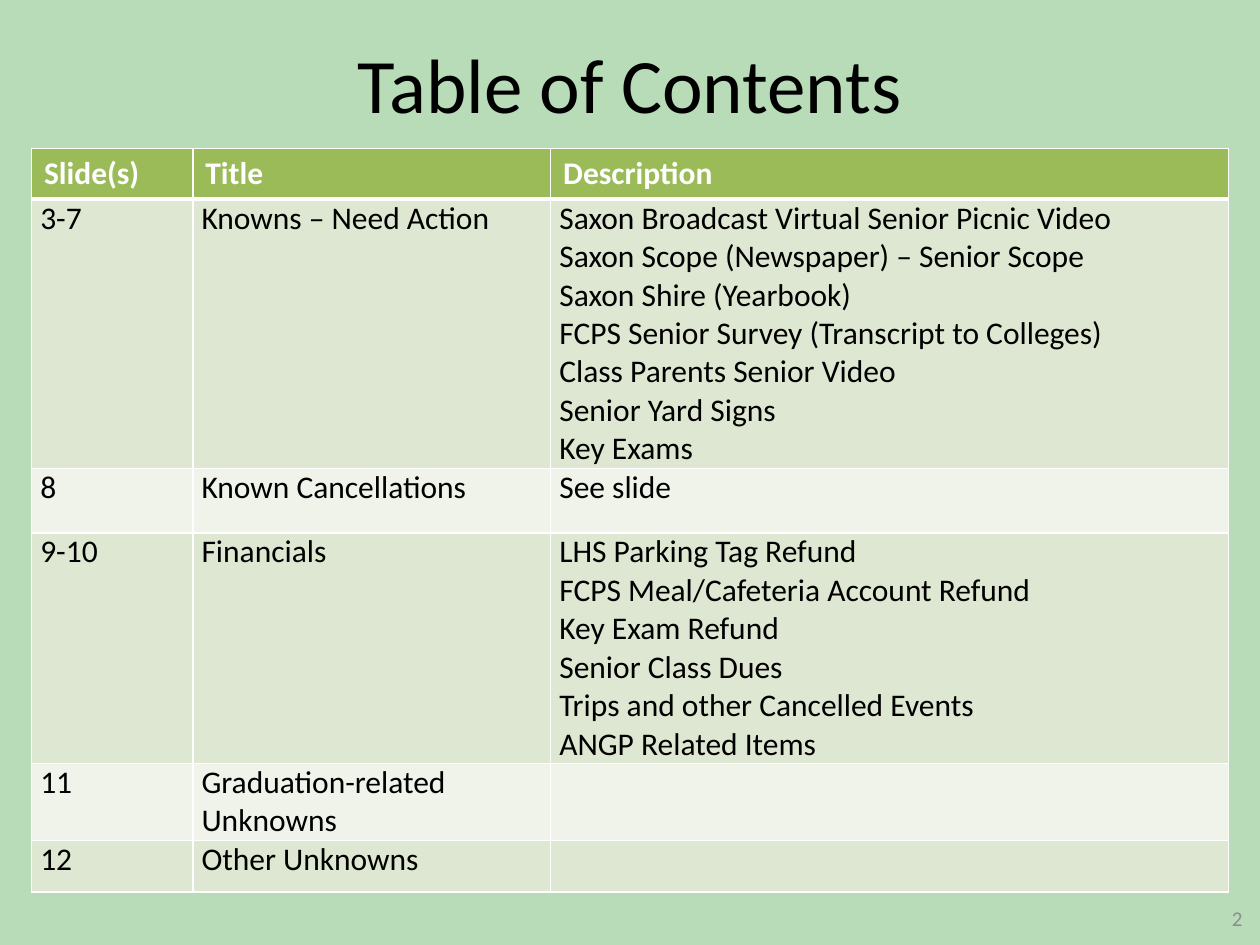
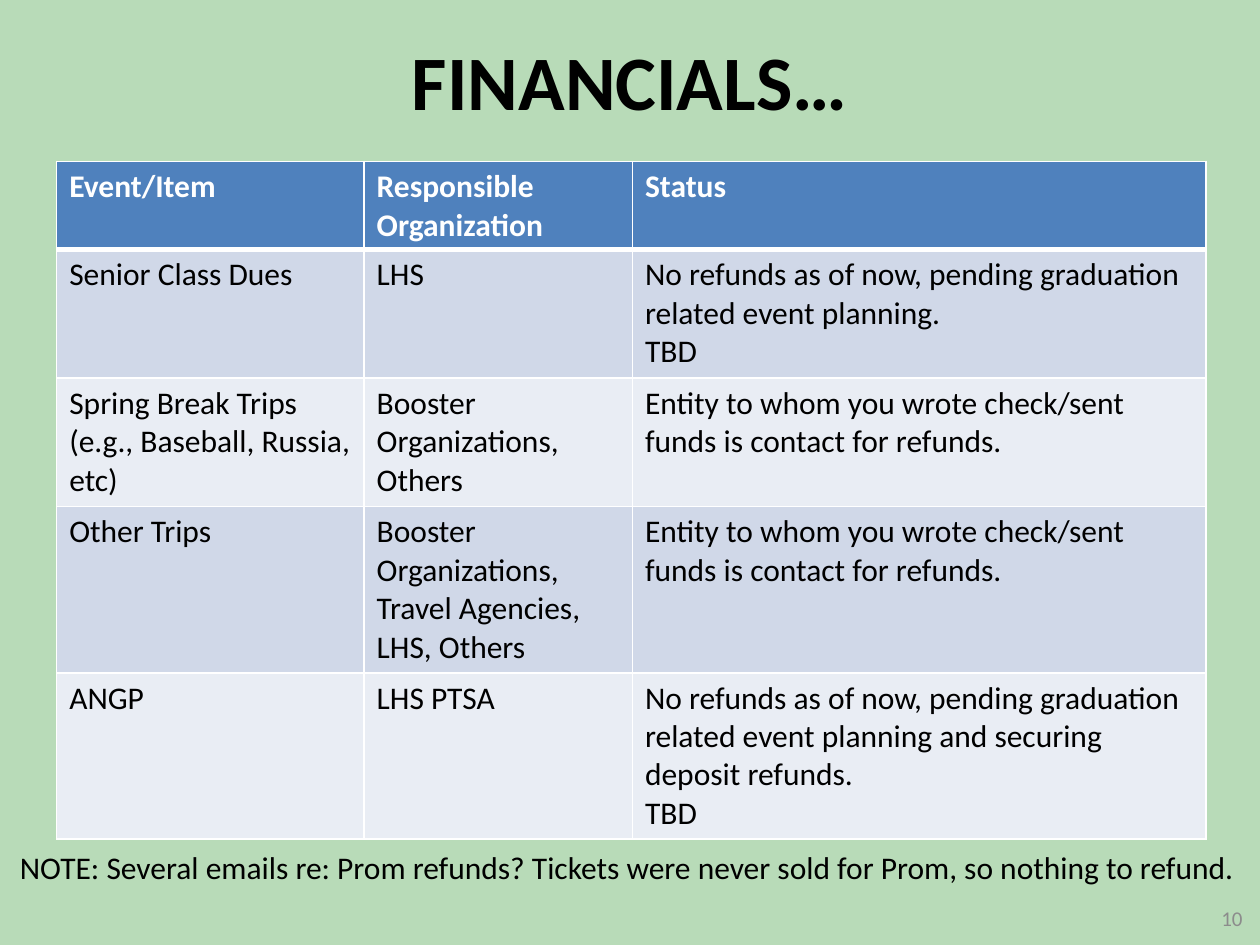
from lxml import etree
from pptx import Presentation
from pptx.dml.color import RGBColor
from pptx.enum import text as t
from pptx.oxml.ns import qn
from pptx.util import Inches, Pt

FONT = "Calibri"
BACKGROUND = "B8DBB8"
BLACK, WHITE, GREY = "000000", "FFFFFF", "8C8C8C"
GREEN = ("9BBB59", "DEE7D1", "EFF3EA")
BLUE = ("4F81BD", "D0D8E8", "E9EDF4")

CONTENTS = [
    ["Slide(s)", "Title", "Description"],
    ["3-7", "Knowns – Need Action",
     "Saxon Broadcast Virtual Senior Picnic Video\n"
     "Saxon Scope (Newspaper) – Senior Scope\n"
     "Saxon Shire (Yearbook)\n"
     "FCPS Senior Survey (Transcript to Colleges)\n"
     "Class Parents Senior Video\n"
     "Senior Yard Signs\n"
     "Key Exams"],
    ["8", "Known Cancellations", "See slide"],
    ["9-10", "Financials",
     "LHS Parking Tag Refund\n"
     "FCPS Meal/Cafeteria Account Refund\n"
     "Key Exam Refund\n"
     "Senior Class Dues\n"
     "Trips and other Cancelled Events\n"
     "ANGP Related Items"],
    ["11", "Graduation-related Unknowns", ""],
    ["12", "Other Unknowns", ""],
]

PENDING = "No refunds as of now, pending graduation related event planning"
ASK_PAYEE = "Entity to whom you wrote check/sent funds is contact for refunds."
REFUNDS = [
    ["Event/Item", "Responsible Organization", "Status"],
    ["Senior Class Dues", "LHS", PENDING + ".\nTBD"],
    ["Spring Break Trips (e.g., Baseball, Russia, etc)",
     "Booster Organizations, Others", ASK_PAYEE],
    ["Other Trips", "Booster Organizations, Travel Agencies, LHS, Others",
     ASK_PAYEE],
    ["ANGP", "LHS PTSA",
     PENDING + " and securing deposit refunds.\nTBD"],
]
NOTE = ("NOTE: Several emails re: Prom refunds? Tickets were never sold "
        "for Prom, so nothing to refund.")


def colour(code):
    return RGBColor.from_string(code)


def write(frame, words, size=18, ink=BLACK, bold=False, align=t.PP_ALIGN.LEFT):
    frame.text = words
    for line in frame.paragraphs:
        line.alignment = align
        for run in line.runs:
            run.font.name = FONT
            run.font.size = Pt(size)
            run.font.bold = bold
            run.font.color.rgb = colour(ink)


def set_borders(cell, **widths):
    properties = cell._tc.get_or_add_tcPr()
    for position, side in enumerate("LRTB"):
        edge = etree.Element(qn(f"a:ln{side}"), w=str(Pt(widths.get(side, 1))))
        fill = etree.SubElement(edge, qn("a:solidFill"))
        etree.SubElement(fill, qn("a:srgbClr"), val=WHITE)
        properties.insert(position, edge)


def add_titled_slide(deck, heading, number, top, bold=False):
    slide = deck.slides.add_slide(deck.slide_layouts[5])
    slide.background.fill.solid()
    slide.background.fill.fore_color.rgb = colour(BACKGROUND)
    title = slide.shapes.title
    title.left, title.top = Inches(0.5), Inches(top)
    title.width, title.height = Inches(9), Inches(1.25)
    title.text_frame.auto_size = t.MSO_AUTO_SIZE.NONE
    title.text_frame.vertical_anchor = t.MSO_ANCHOR.MIDDLE
    write(title.text_frame, heading, size=44, bold=bold,
          align=t.PP_ALIGN.CENTER)
    footer = add_label(slide, (7.63, 7.09, 2.33, 0.4), str(number), size=12,
                       ink=GREY, align=t.PP_ALIGN.RIGHT)
    footer.vertical_anchor = t.MSO_ANCHOR.MIDDLE
    return slide


def add_label(slide, box, words, wrap=True, **style):
    frame = slide.shapes.add_textbox(*map(Inches, box)).text_frame
    frame.word_wrap = wrap
    write(frame, words, **style)
    return frame


def add_grid(slide, corner, widths, heights, rows, palette, tight=False):
    header_fill, *bands = palette
    box = (*corner, sum(widths), sum(heights))
    grid = slide.shapes.add_table(len(rows), len(widths),
                                  *map(Inches, box)).table
    for column, width in zip(grid.columns, widths):
        column.width = Inches(width)
    for r, (height, entries) in enumerate(zip(heights, rows)):
        grid.rows[r].height = Inches(height)
        header = r == 0
        for c, words in enumerate(entries):
            cell = grid.cell(r, c)
            cell.fill.solid()
            cell.fill.fore_color.rgb = colour(
                header_fill if header else bands[(r - 1) % 2])
            if tight and not header and words:
                cell.margin_left = cell.margin_right = Inches(0.07)
                cell.margin_top = cell.margin_bottom = 0
            write(cell.text_frame, words, bold=header,
                  ink=WHITE if header else BLACK)
            set_borders(cell, B=3 if header else 1, T=3 if r == 1 else 1)


def build_contents(deck):
    slide = add_titled_slide(deck, "Table of Contents", 2, top=0.03)
    add_grid(slide, (0.25, 1.18), (1.28, 2.84, 5.38),
             (0.4, 2.14, 0.51, 1.83, 0.61, 0.41), CONTENTS, GREEN, tight=True)


def build_financials(deck):
    slide = add_titled_slide(deck, "FINANCIALS…", 10, top=0.01, bold=True)
    add_grid(slide, (0.45, 1.28), (2.44, 2.13, 4.55),
             (0.7, 1.02, 1.02, 1.32, 1.32), REFUNDS, BLUE)
    add_label(slide, (0.06, 6.68, 9.89, 0.4), NOTE, wrap=False)


def main():
    deck = Presentation()
    deck.slide_width, deck.slide_height = Inches(10), Inches(7.5)
    build_contents(deck)
    build_financials(deck)
    deck.save("out.pptx")


if __name__ == "__main__":
    main()
